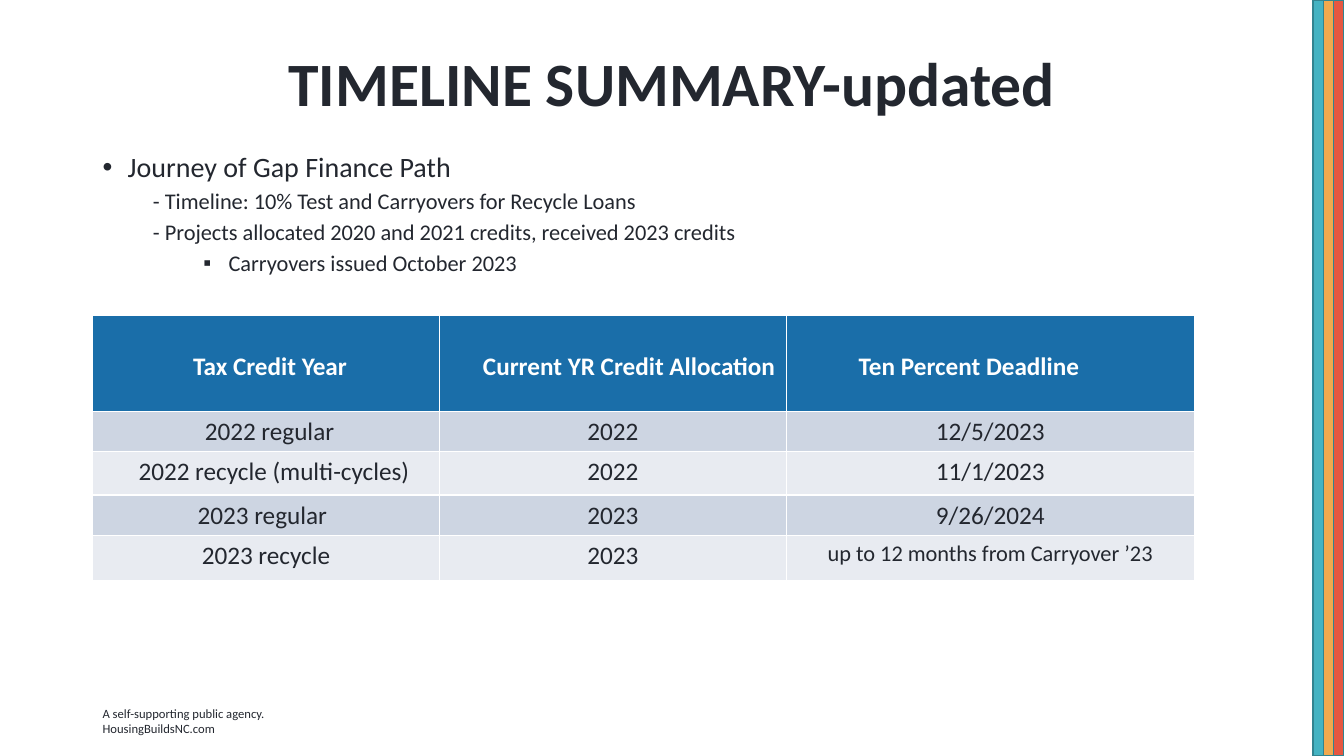
from lxml.etree import SubElement
from pptx import Presentation
from pptx.dml.color import RGBColor
from pptx.enum.shapes import MSO_SHAPE as Shape
from pptx.enum.text import MSO_ANCHOR as Anchor, PP_ALIGN as Align
from pptx.oxml.ns import qn
from pptx.util import Pt

TITLE = "TIMELINE SUMMARY-updated"
# text, size, left margin, first-line indent, bullet
OUTLINE = [
    ("Journey of Gap Finance Path", 20, 18, -18, "•"),
    ("- Timeline: 10% Test and Carryovers for Recycle Loans", 16, 36, 0, None),
    ("- Projects allocated 2020 and 2021 credits, received 2023 credits", 16, 36, 0, None),
    ("Carryovers issued October 2023", 16, 90, -18, "▪"),
]
# text, left inset
HEADERS = [
    ("Tax Credit Year", 71.7),
    ("Current YR Credit Allocation", 31.1),
    ("Ten Percent Deadline", 51.8),
]
# credit year, its left inset, allocation, deadline, deadline size
ROWS = [
    ("2022 regular", 12.2, "2022", "12/5/2023", 18),
    ("2022 recycle (multi-cycles)", 18.6, "2022", "11/1/2023", 18),
    ("2023 regular", 2, "2023", "9/26/2024", 18),
    ("2023 recycle", 7.2, "2023", "up to 12 months from Carryover ’23", 16),
]
FOOTER = ["A self-supporting public agency.", "HousingBuildsNC.com"]

FONT = "Calibri"
INK = RGBColor(0x23, 0x27, 0x2F)
WHITE = RGBColor(0xFF, 0xFF, 0xFF)
HEADER_BLUE = RGBColor(0x1A, 0x6E, 0xA9)
BANDS = [RGBColor(0xCD, 0xD5, 0xE2), RGBColor(0xE8, 0xEB, 0xF1)]
STRIPE_LINE = RGBColor(0x32, 0x84, 0x90)
STRIPES = [
    RGBColor(0x44, 0xB3, 0xC2),
    RGBColor(0xF1, 0xA9, 0x4E),
    RGBColor(0xE6, 0x57, 0x41),
]

SLIDE_WIDTH, SLIDE_HEIGHT = 960, 540
LEFT = 66.2
STRIPE_WIDTH = 7.4
COLUMN_WIDTHS = [247.7, 247.7, 291.6]
ROW_HEIGHTS = [68.4, 27.4, 31, 27.4, 32.4]
CELL_INSET = 7.2


def set_font(paragraph, size, color=INK, bold=False):
    font = paragraph.font
    font.name, font.size, font.bold = FONT, Pt(size), bold
    font.color.rgb = color


def add_text_frame(slide, left, top, width, height):
    frame = slide.shapes.add_textbox(Pt(left), Pt(top), Pt(width), Pt(height)).text_frame
    frame.word_wrap = True
    return frame


def add_paragraphs(frame, texts):
    """Fill the frame with one paragraph per text and return the paragraphs."""
    frame.text = "\n".join(texts)
    return frame.paragraphs


def set_indent(paragraph, margin, indent, bullet):
    properties = paragraph._p.get_or_add_pPr()
    properties.set("marL", str(Pt(margin)))
    properties.set("indent", str(Pt(indent)))
    if bullet:
        SubElement(properties, qn("a:buFont"), typeface="Arial")
        SubElement(properties, qn("a:buChar"), char=bullet)


def fill_cell(cell, text, fill, inset=CELL_INSET, size=18, color=INK, bold=False,
              align=Align.CENTER):
    cell.fill.solid()
    cell.fill.fore_color.rgb = fill
    cell.margin_left = Pt(inset)
    cell.text = text
    paragraph = cell.text_frame.paragraphs[0]
    paragraph.alignment = align
    set_font(paragraph, size, color, bold)


def add_stripes(slide):
    first_left = SLIDE_WIDTH - len(STRIPES) * STRIPE_WIDTH
    for index, color in enumerate(STRIPES):
        stripe = slide.shapes.add_shape(
            Shape.RECTANGLE, Pt(first_left + index * STRIPE_WIDTH), 0,
            Pt(STRIPE_WIDTH), Pt(SLIDE_HEIGHT))
        stripe.shadow.inherit = False
        stripe.fill.solid()
        stripe.fill.fore_color.rgb = color
        stripe.line.color.rgb = STRIPE_LINE
        stripe.line.width = Pt(1)


def add_title(slide):
    frame = add_text_frame(slide, LEFT, 28.8, 828, 65.5)
    frame.vertical_anchor = Anchor.MIDDLE
    paragraph, = add_paragraphs(frame, [TITLE])
    paragraph.alignment = Align.CENTER
    paragraph.line_spacing = 0.9
    set_font(paragraph, 44, bold=True)


def add_outline(slide):
    frame = add_text_frame(slide, LEFT, 105.8, 847.4, 100)
    paragraphs = add_paragraphs(frame, [item[0] for item in OUTLINE])
    for index, (paragraph, item) in enumerate(zip(paragraphs, OUTLINE)):
        _, size, margin, indent, bullet = item
        paragraph.line_spacing = 0.9
        paragraph.space_before = Pt(5 if index else 0)
        set_indent(paragraph, margin, indent, bullet)
        set_font(paragraph, size)


def add_deadline_table(slide):
    table = slide.shapes.add_table(
        len(ROW_HEIGHTS), len(COLUMN_WIDTHS), Pt(LEFT), Pt(225.4),
        Pt(sum(COLUMN_WIDTHS)), Pt(sum(ROW_HEIGHTS))).table
    for column, width in zip(table.columns, COLUMN_WIDTHS):
        column.width = Pt(width)
    for row, height in zip(table.rows, ROW_HEIGHTS):
        row.height = Pt(height)

    for column, (text, inset) in enumerate(HEADERS):
        cell = table.cell(0, column)
        fill_cell(cell, text, HEADER_BLUE, inset, color=WHITE, bold=True, align=Align.LEFT)
        cell.margin_top = Pt(25.6)
        cell.margin_right = 0

    for index, (year, inset, allocation, deadline, size) in enumerate(ROWS):
        fill = BANDS[index % 2]
        cells = table.rows[index + 1].cells
        fill_cell(cells[0], year, fill, inset)
        fill_cell(cells[1], allocation, fill)
        fill_cell(cells[2], deadline, fill, size=size)


def add_footer(slide):
    frame = add_text_frame(slide, LEFT, 500.4, 221.8, 28.8)
    for paragraph in add_paragraphs(frame, FOOTER):
        set_font(paragraph, 9)


def main():
    presentation = Presentation()
    presentation.slide_width = Pt(SLIDE_WIDTH)
    presentation.slide_height = Pt(SLIDE_HEIGHT)
    slide = presentation.slides.add_slide(presentation.slide_layouts[6])
    add_stripes(slide)
    add_footer(slide)
    add_title(slide)
    add_outline(slide)
    add_deadline_table(slide)
    presentation.save("out.pptx")


if __name__ == "__main__":
    main()
